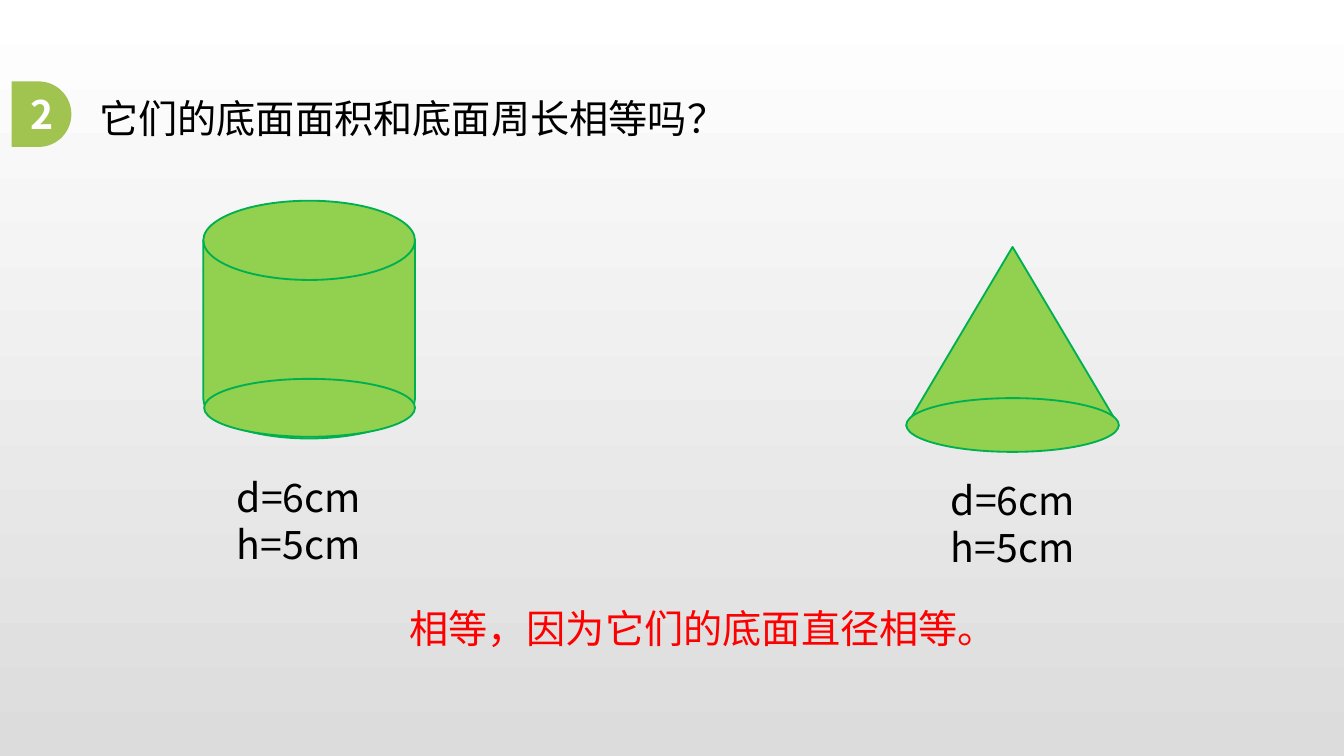
from dataclasses import dataclass
from math import cos, pi, sin

from lxml.etree import SubElement
from pptx import Presentation
from pptx.dml.color import RGBColor
from pptx.enum.shapes import MSO_SHAPE
from pptx.enum.text import MSO_ANCHOR, MSO_AUTO_SIZE, PP_ALIGN
from pptx.oxml.ns import qn
from pptx.shapes.base import BaseShape
from pptx.slide import Slide
from pptx.util import Emu, Pt

PX = 5715  # 160 px to the inch
FONT = "Noto Sans CJK SC"
BLACK = RGBColor(0x00, 0x00, 0x00)
WHITE = RGBColor(0xFF, 0xFF, 0xFF)
GREY = RGBColor(0xDC, 0xDC, 0xDC)
RED = RGBColor(0xFF, 0x00, 0x00)
GREEN = RGBColor(0x92, 0xD0, 0x50)
DARK_GREEN = RGBColor(0x00, 0xB0, 0x50)
BADGE_GREEN = RGBColor(0xA1, 0xC4, 0x50)

FRAME_FORMAT = {
    "margin_left": Emu(12 * PX),
    "margin_right": Emu(12 * PX),
    "margin_top": Emu(6 * PX),
    "margin_bottom": Emu(6 * PX),
    "auto_size": MSO_AUTO_SIZE.NONE,
}


@dataclass(frozen=True)
class Box:
    left: int
    top: int
    width: int
    height: int

    def emu(self) -> tuple[Emu, ...]:
        return tuple(Emu(value * PX) for value in
                     (self.left, self.top, self.width, self.height))


@dataclass(frozen=True)
class Solid:
    body: MSO_SHAPE
    body_box: Box
    base_box: Box
    label_box: Box


QUESTION_BOX = Box(106, 106, 778, 69)
ANSWER_BOX = Box(475, 714, 731, 69)
BADGE_BOX = Box(14, 97, 71, 78)
DIMENSIONS = ["d=6cm", "h=5cm"]
SOLIDS = [
    Solid(MSO_SHAPE.ISOSCELES_TRIANGLE, Box(1079, 294, 253, 213),
          Box(1079, 474, 253, 64), Box(1120, 561, 198, 125)),
    Solid(MSO_SHAPE.FLOWCHART_MAGNETIC_DISK, Box(242, 239, 252, 283),
          Box(243, 451, 251, 69), Box(270, 557, 198, 125)),
]


def write_text(shape: BaseShape, lines: list[str], color: RGBColor,
               wrap: bool = False, bold: bool = False,
               align: PP_ALIGN = PP_ALIGN.LEFT,
               anchor: MSO_ANCHOR = MSO_ANCHOR.TOP) -> None:
    frame = shape.text_frame
    frame_format = FRAME_FORMAT | {"word_wrap": wrap, "vertical_anchor": anchor}
    for name, value in frame_format.items():
        setattr(frame, name, value)
    frame.text = "\n".join(lines)
    for paragraph in frame.paragraphs:
        paragraph.alignment = align
        for run in paragraph.runs:
            for name, value in {"size": Pt(21), "name": FONT, "bold": bold}.items():
                setattr(run.font, name, value)
            run.font.color.rgb = color
            # East Asian typeface
            SubElement(run.font._rPr, qn("a:ea")).set("typeface", FONT)


def add_text(slide: Slide, box: Box, lines: list[str], color: RGBColor,
             wrap: bool = False) -> None:
    write_text(slide.shapes.add_textbox(*box.emu()), lines, color, wrap)


def add_solid(slide: Slide, solid: Solid) -> None:
    group = slide.shapes.add_group_shape()
    for kind, box in ((solid.body, solid.body_box),
                      (MSO_SHAPE.OVAL, solid.base_box)):
        shape = group.shapes.add_shape(kind, *box.emu())
        shape.shadow.inherit = False
        shape.fill.solid()
        shape.fill.fore_color.rgb = GREEN
        shape.line.color.rgb = DARK_GREEN
        shape.line.width = Pt(1)


def add_badge(slide: Slide, box: Box, number: str) -> None:
    left, top, width, height = box.emu()
    radius = height / 2
    center_x, center_y = left + width - radius, top + radius
    steps = 48
    arc = [(center_x + radius * sin(pi * step / steps),
            center_y - radius * cos(pi * step / steps))
           for step in range(steps + 1)]
    builder = slide.shapes.build_freeform(left, top)
    builder.add_line_segments([*arc, (left, top + height)], close=True)
    badge = builder.convert_to_shape()
    badge.shadow.inherit = False
    badge.fill.solid()
    badge.fill.fore_color.rgb = BADGE_GREEN
    badge.line.fill.background()
    write_text(badge, [number], WHITE, wrap=True, bold=True,
               align=PP_ALIGN.CENTER, anchor=MSO_ANCHOR.MIDDLE)


def main() -> None:
    presentation = Presentation()
    presentation.slide_width = Emu(1600 * PX)
    presentation.slide_height = Emu(900 * PX)
    slide = presentation.slides.add_slide(presentation.slide_layouts[5])

    # Background, white at the top to grey at the bottom
    fill = slide.background.fill
    fill.gradient()
    fill.gradient_angle = 270
    for stop, color in zip(fill.gradient_stops, (WHITE, GREY)):
        stop.color.rgb = color

    # Question and answer
    title = slide.shapes.title
    title.left, title.top, title.width, title.height = QUESTION_BOX.emu()
    write_text(title, ["它们的底面面积和底面周长相等吗？"], BLACK)
    add_text(slide, ANSWER_BOX, ["相等，因为它们的底面直径相等。"], RED)

    # Cone and cylinder with their dimensions
    for solid in SOLIDS:
        add_solid(slide, solid)
        add_text(slide, solid.label_box, DIMENSIONS, BLACK, wrap=True)

    # Question number
    add_badge(slide, BADGE_BOX, "2")

    presentation.save("out.pptx")


if __name__ == "__main__":
    main()
